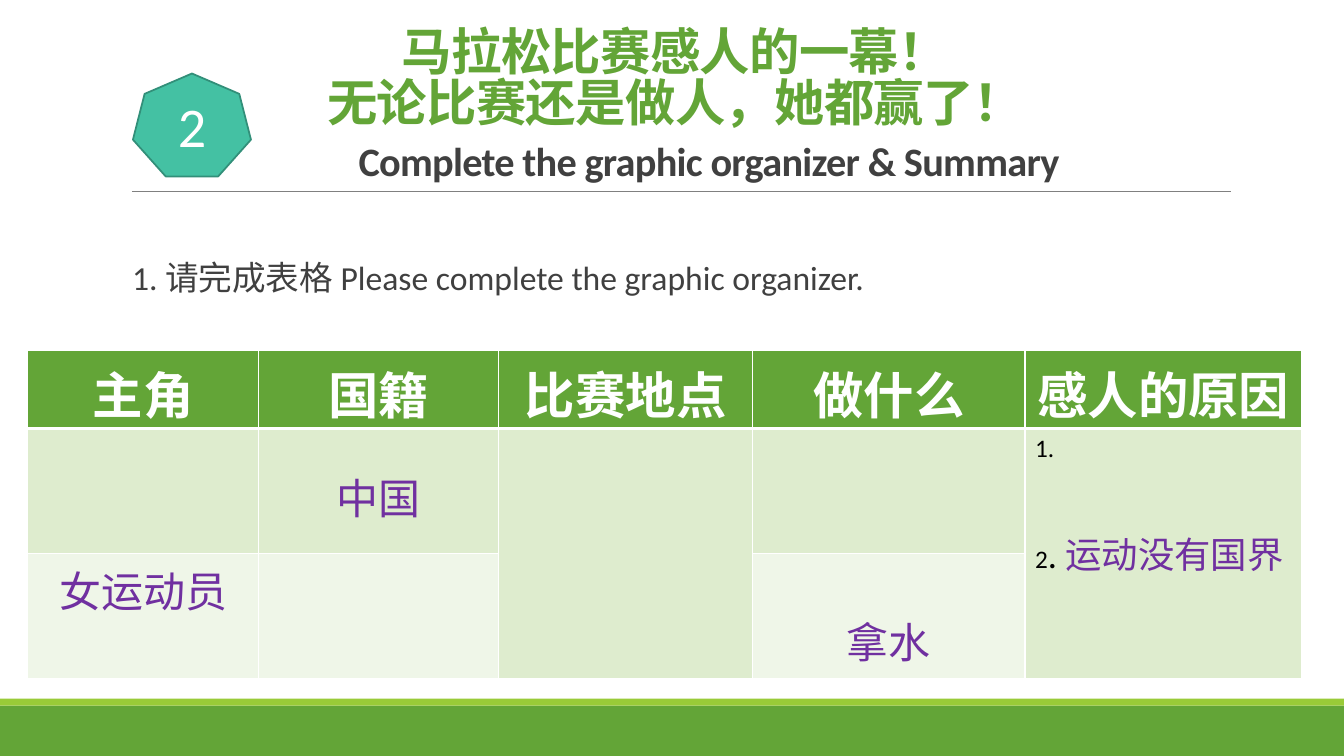
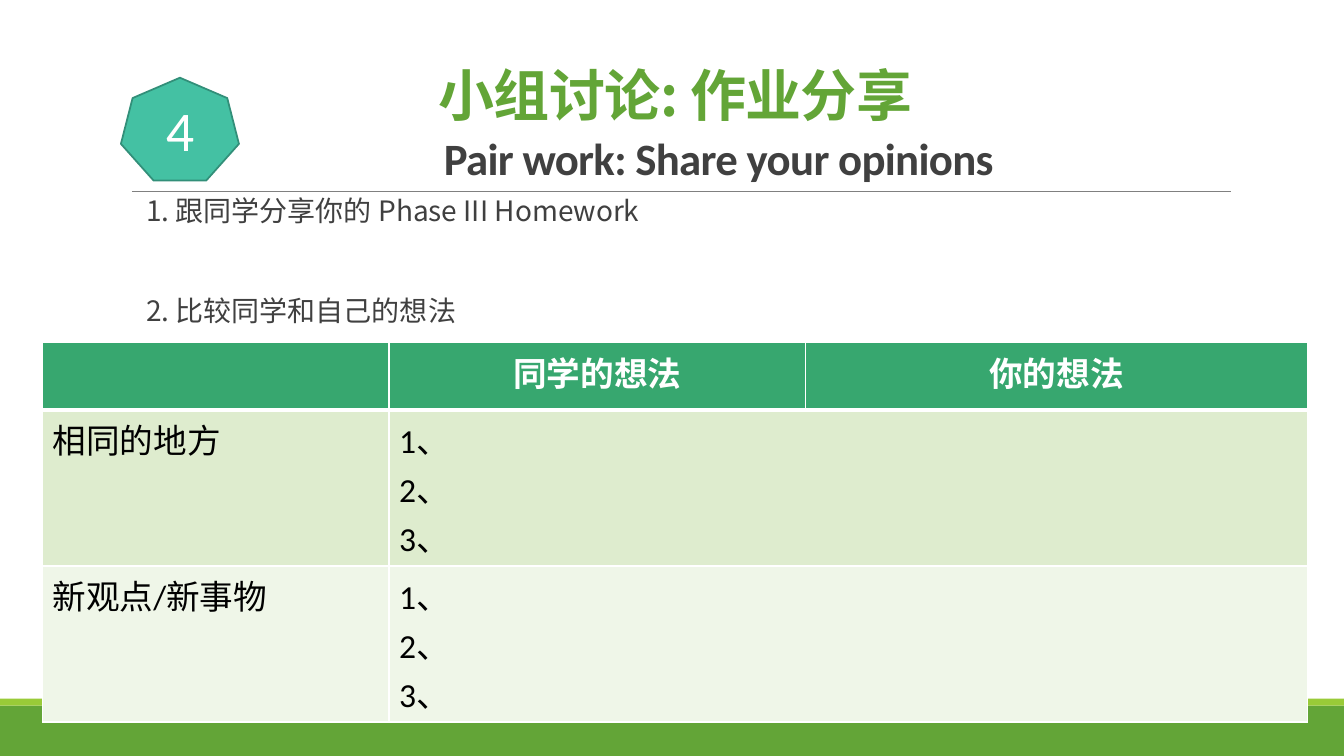
from lxml.etree import SubElement as Sub
from pptx import Presentation
from pptx.dml.color import RGBColor as RGB
from pptx.enum.shapes import MSO_CONNECTOR as Conn, MSO_SHAPE as Shape
from pptx.enum.text import MSO_ANCHOR as Anchor, PP_ALIGN as Align
from pptx.oxml.ns import qn
from pptx.util import Pt

HUES = {
    "green": "63A537", "lime": "99CB38", "teal": "44C1A3", "edge": "328F79",
    "jade": "37A76F", "pale": "DEECCE", "mist": "EFF6E8", "gray": "808080",
    "dark": "404040", "plum": "7030A0", "black": "000000", "white": "FFFFFF",
}
LATIN, HAN = "Calibri", "Noto Sans CJK SC"
WIDE, HIGH = 960, 540


def hue(name):
    """Return the named colour."""
    return RGB.from_string(HUES[name])


def paint(part, name):
    """Fill a shape or cell with a flat colour."""
    part.fill.solid()
    part.fill.fore_color.rgb = hue(name)


def style(font, size, color, bold=False, face=LATIN):
    """Set size, colour, weight and both typefaces of a font."""
    font.size, font.bold, font.name = Pt(size), bold, face
    font.color.rgb = hue(color)
    Sub(font._element, qn("a:ea")).set("typeface", HAN)


def write(frame, lines, size, color, bold=False, face=LATIN, align=Align.LEFT):
    """Write one paragraph per line in a single style."""
    pars = []
    for i, line in enumerate(lines):
        par = frame.add_paragraph() if i else frame.paragraphs[0]
        par.text, par.alignment = line, align
        style(par.font, size, color, bold, face)
        pars.append(par)
    return pars


def textbox(slide, box, inset=0):
    """Add a wrapping text frame with even insets."""
    frame = slide.shapes.add_textbox(*map(Pt, box)).text_frame
    frame.word_wrap = True
    frame.margin_left = frame.margin_right = Pt(inset)
    frame.margin_top = frame.margin_bottom = Pt(inset / 2)
    return frame


def bands(slide):
    """Draw the footer bands and the rule under the title."""
    for top, high, color in ((504, 36, "green"), (499, 5, "lime")):
        bar = slide.shapes.add_shape(
            Shape.RECTANGLE, 0, Pt(top), Pt(WIDE), Pt(high))
        bar.shadow.inherit = False
        paint(bar, color)
        bar.line.fill.background()
    rule = slide.shapes.add_connector(
        Conn.STRAIGHT, Pt(94.3), Pt(136.8), Pt(879), Pt(136.8))
    rule.line.color.rgb, rule.line.width = hue("gray"), Pt(0.5)
    Sub(rule._element.spPr, qn("a:effectLst"))


def badge(slide, left, top, mark):
    """Draw the numbered heptagon."""
    shape = slide.shapes.add_shape(
        Shape.HEPTAGON, Pt(left), Pt(top), Pt(84.3), Pt(73.5))
    shape.shadow.inherit = False
    paint(shape, "teal")
    shape.line.color.rgb, shape.line.width = hue("edge"), Pt(1.25)
    shape.text_frame.vertical_anchor = Anchor.MIDDLE
    write(shape.text_frame, [mark], 40, "white", align=Align.CENTER)


def title(slide, lines, sub, size, shift):
    """Write the green title with its dark subtitle moved to the right."""
    frame = textbox(slide, (86.4, 22.3, 792, 113), 7.2)
    frame.vertical_anchor = Anchor.BOTTOM
    pars = write(frame, lines, size, "green", True, HAN, Align.CENTER)
    last = frame.add_paragraph()
    last.text, last.alignment = sub, Align.CENTER
    last.space_before = Pt(8)
    last._p.get_or_add_pPr().set("marL", str(Pt(shift)))
    style(last.font, size * 0.8, "dark", True)
    for par in pars + [last]:
        par.line_spacing = 0.85
        par.font._element.set("spc", "-50")


def steps(slide, box, lines, size, face, gap=0):
    """Write the task lines above a table."""
    pars = write(textbox(slide, box), lines, size, "dark", face=face)
    for i, par in enumerate(pars):
        par.line_spacing = 0.9
        par.space_before = Pt(gap if i else 0)


def border(cell, row):
    """Draw white cell borders, thick below the header row."""
    props = cell._tc.get_or_add_tcPr()
    thick = {"lnB": row == 0, "lnT": row == 1}
    for side in ("lnL", "lnR", "lnT", "lnB"):
        line = Sub(props, qn("a:" + side), w=str(Pt(3 if thick.get(side) else 1)))
        fill = Sub(line, qn("a:solidFill"))
        Sub(fill, qn("a:srgbClr"), val=HUES["white"])


def grid(slide, left, top, cols, rows, heads, size, color):
    """Add a table with a coloured header and two tinted rows."""
    table = slide.shapes.add_table(
        len(rows), len(cols), Pt(left), Pt(top),
        Pt(sum(cols)), Pt(sum(rows))).table
    for col, wide in zip(table.columns, cols):
        col.width = Pt(wide)
    for i, high in enumerate(rows):
        table.rows[i].height = Pt(high)
        for cell in table.rows[i].cells:
            border(cell, i)
            paint(cell, (color, "pale", "mist")[i])
    for cell, head in zip(table.rows[0].cells, heads):
        if head:
            write(cell.text_frame, [head], size, "white", True,
                  align=Align.CENTER)
    return table


def reasons(cell):
    """Write the two numbered reasons."""
    cell.margin_right = Pt(10)
    frame = cell.text_frame
    write(frame, ["1."], 18, "black")
    par = frame.add_paragraph()
    par.space_before = Pt(44)
    parts = (("2", 18, "black"), (". ", 26, "black"),
             ("运动没有国界", 26, "plum"))
    for text, size, color in parts:
        run = par.add_run()
        run.text = text
        style(run.font, size, color)


def summary(slide):
    """Build the slide with the graphic organizer."""
    bands(slide)
    badge(slide, 95, 52.5, "2")
    title(slide, ["马拉松比赛感人的一幕！", "无论比赛还是做人，她都赢了！"],
          "Complete the graphic organizer & Summary", 36, 48)
    steps(slide, (94.3, 187, 780, 36),
          ["1. 请完成表格 Please complete the graphic organizer."], 24, LATIN)
    heads = ["主角", "国籍", "比赛地点", "做什么", "感人的原因"]
    table = grid(slide, 19.7, 250.6, (165, 171.5, 181.5, 194.5, 197.5),
                 (55.5, 89.5, 89.5), heads, 36, "green")
    for cell in table.rows[0].cells:
        cell.margin_left = cell.margin_right = Pt(5)
        cell.margin_top = cell.margin_bottom = 0
        cell.text_frame.paragraphs[0].line_spacing = 1.07
    for col in (2, 4):
        table.cell(1, col).merge(table.cell(2, col))
    clues = ((1, 1, "中国", 26.5), (2, 0, "女运动员", 3.6), (2, 3, "拿水", 40))
    for row, col, text, top in clues:
        cell = table.cell(row, col)
        cell.margin_top = Pt(top)
        write(cell.text_frame, [text], 30, "plum", align=Align.CENTER)
    reasons(table.cell(1, 4))


def sharing(slide):
    """Build the slide for pair work."""
    bands(slide)
    steps(slide, (104.3, 141.2, 760, 102),
          ["1. 跟同学分享你的 Phase III Homework", "2. 比较同学和自己的想法"],
          20, HAN, 49.5)
    badge(slide, 86.4, 55.5, "4")
    title(slide, ["小组讨论: 作业分享"], "Pair work: Share your opinions",
          40, 62)
    table = grid(slide, 30.4, 244.8, (247.5, 297.5, 358.5),
                 (48, 111.5, 111.5), ["", "同学的想法", "你的想法"], 24, "jade")
    for row, topic in enumerate(("相同的地方", "新观点/新事物"), 1):
        write(table.cell(row, 0).text_frame, [topic], 24, "black")
        table.cell(row, 1).merge(table.cell(row, 2))
        write(table.cell(row, 1).text_frame, ["1、", "2、", "3、"], 24, "black")


def main():
    """Build and save the deck."""
    deck = Presentation()
    deck.slide_width, deck.slide_height = Pt(WIDE), Pt(HIGH)
    for build in (summary, sharing):
        build(deck.slides.add_slide(deck.slide_layouts[6]))
    deck.save("out.pptx")


if __name__ == "__main__":
    main()
